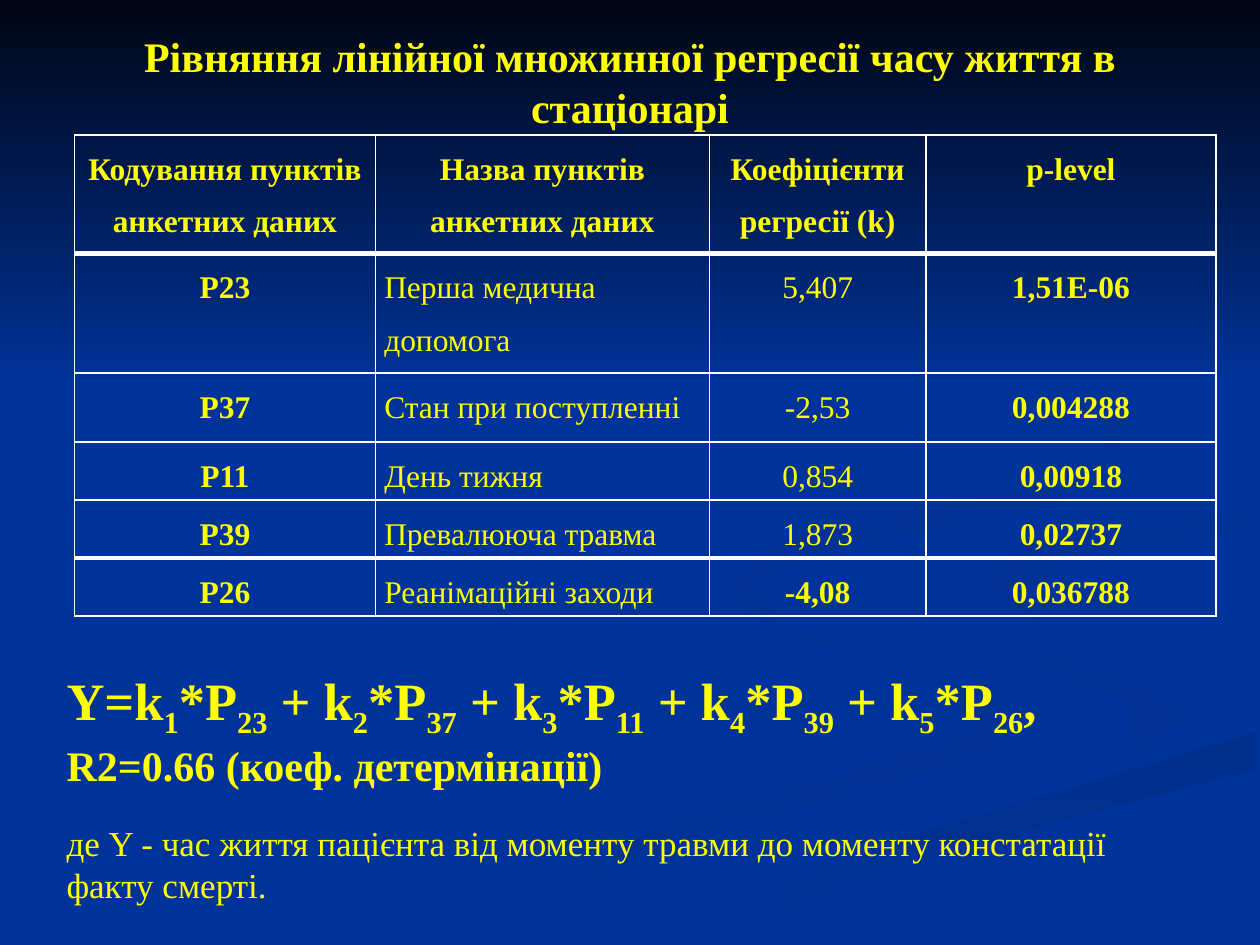
import dataclasses
import typing

import lxml.etree
import pptx
import pptx.dml.color
import pptx.enum.shapes
import pptx.enum.text
import pptx.oxml.ns
import pptx.util

Inches = pptx.util.Inches
Pt = pptx.util.Pt
Align = pptx.enum.text.PP_ALIGN
Points = typing.Sequence[typing.Tuple[float, float]]
FONT, YELLOW, BLUE, WHITE = "Times New Roman", "FFFF00", "003399", "FFFFFF"


@dataclasses.dataclass
class Ribbon:
    points: Points
    start: str
    end: str
    angle: int


@dataclasses.dataclass
class Predictor:
    code: str
    name: str
    coefficient: str
    p_level: str
    significant: bool = False


RIBBONS = [
    Ribbon([(7.8, 5.5), (6.1, 5), (5.75, 4.59), (5.8, 4.8), (7.6, 5.5), (7.8, 5.8),
            (5.4, 6.5), (3, 7.49), (3.6, 7.49), (5.6, 6.6), (7.8, 6), (8, 5.8)],
           BLUE, "003193", 0),
    Ribbon([(9.43, 5.7), (9, 5.4), (7.6, 5), (7.24, 4.64), (7.5, 5), (9, 5.6), (8.94, 6.05)],
           BLUE, "003193", 45),
    Ribbon([(5.03, 7.49), (5.7, 7.49), (7, 6.9), (9.98, 6.1), (9.98, 5.81), (7.6, 6.5),
            (6, 7)], "002F8C", BLUE, 90),
    Ribbon([(7.25, 4.64), (7.6, 5), (9, 5.4), (9.43, 5.7), (9, 6), (6.6, 6.7), (4.77, 7.49),
            (5.03, 7.49), (7, 6.7), (9.99, 5.8), (9.99, 5.4), (8.2, 4.9), (7.8, 4.6),
            (8.5, 4.3), (9.99, 4), (9.99, 3.87), (7.9, 4.2)], BLUE, BLUE, 0),
    Ribbon([(7.81, 4.6), (8.26, 4.96), (8.1, 4.7), (8.6, 4.4), (9.98, 4.2), (9.98, 4.02),
            (8.2, 4.3)], "003091", BLUE, 45),
    Ribbon([(6.8, 4.3), (8.4, 4), (8.94, 3.4), (8.5, 2.8), (7.62, 2.33), (8.7, 3),
            (8.8, 3.6), (8, 3.9), (6.2, 4.3), (5.77, 4.6), (6.22, 5), (5.95, 4.6)],
           "002F8E", BLUE, 45),
    Ribbon([(0, 0), (0, 3.08), (10, 3.08), (10, 0)], "000514", BLUE, 90),
]

HEADINGS = ["Кодування пунктів анкетних даних", "Назва пунктів анкетних даних",
            "Коефіцієнти регресії (k)", "p-level"]
PREDICTORS = [
    Predictor("P23", "Перша медична допомога", "5,407", "1,51E-06"),
    Predictor("P37", "Стан при поступленні", "-2,53", "0,004288"),
    Predictor("P11", "День тижня", "0,854", "0,00918"),
    Predictor("P39", "Превалююча травма", "1,873", "0,02737"),
    Predictor("P26", "Реанімаційні заходи", "-4,08", "0,036788", True),
]
COLUMN_WIDTHS = [2.39, 2.65, 1.72, 2.3]
ROW_HEIGHTS = [0.94, 0.95, 0.55, 0.46, 0.46, 0.46]
THICK_LINES = {1, 5}


def color(value: str) -> pptx.dml.color.RGBColor:
    return pptx.dml.color.RGBColor.from_string(value)


def format_runs(paragraph, size: float, bold: bool) -> None:
    for run in paragraph.runs:
        run.font.name = FONT
        run.font.size = Pt(size)
        run.font.bold = bold
        run.font.color.rgb = color(YELLOW)


def draw_ribbon(slide, ribbon: Ribbon) -> None:
    points = [(Inches(x), Inches(y)) for x, y in ribbon.points]
    builder = slide.shapes.build_freeform(*points[0])
    builder.add_line_segments(points[1:], close=True)
    shape = builder.convert_to_shape()
    shape.shadow.inherit = False
    shape.line.fill.background()
    shape.fill.gradient()
    shape.fill.gradient_angle = (360 - ribbon.angle) % 360
    for stop, value in zip(shape.fill.gradient_stops, (ribbon.start, ribbon.end)):
        stop.color.rgb = color(value)
    slide.shapes.title.element.addprevious(shape.element)


def set_borders(cell, row: int) -> None:
    properties = cell._tc.get_or_add_tcPr()
    widths = {"L": 1, "R": 1, "T": 3 if row in THICK_LINES else 1,
              "B": 3 if row + 1 in THICK_LINES else 1}
    for index, (side, width) in enumerate(widths.items()):
        line = lxml.etree.Element(pptx.oxml.ns.qn(f"a:ln{side}"), w=str(Pt(width)))
        fill = lxml.etree.SubElement(line, pptx.oxml.ns.qn("a:solidFill"))
        lxml.etree.SubElement(fill, pptx.oxml.ns.qn("a:srgbClr"), val=WHITE)
        properties.insert(index, line)


def fill_cell(cell, text: str, row: int, align, bold: bool) -> None:
    cell.margin_left = cell.margin_right = Inches(0.07)
    cell.margin_top = cell.margin_bottom = 0
    cell.fill.background()
    cell.text_frame.text = text
    paragraph = cell.text_frame.paragraphs[0]
    paragraph.alignment = align
    paragraph.line_spacing = 1.5
    format_runs(paragraph, 18, bold)
    set_borders(cell, row)


def draw_table(slide) -> None:
    frame = slide.shapes.add_table(
        len(ROW_HEIGHTS), len(COLUMN_WIDTHS), Inches(0.59), Inches(1.07),
        Inches(sum(COLUMN_WIDTHS)), Inches(sum(ROW_HEIGHTS)))
    table = frame.table
    table.first_row = table.horz_banding = False
    for column, width in zip(table.columns, COLUMN_WIDTHS):
        column.width = Inches(width)
    for row, height in zip(table.rows, ROW_HEIGHTS):
        row.height = Inches(height)
    for index, heading in enumerate(HEADINGS):
        fill_cell(table.cell(0, index), heading, 0, Align.CENTER, True)
    for row, item in enumerate(PREDICTORS, 1):
        fill_cell(table.cell(row, 0), item.code, row, Align.CENTER, True)
        fill_cell(table.cell(row, 1), item.name, row, Align.LEFT, False)
        fill_cell(table.cell(row, 2), item.coefficient, row, Align.CENTER, item.significant)
        fill_cell(table.cell(row, 3), item.p_level, row, Align.CENTER, True)


def draw_equation(slide) -> None:
    box = slide.shapes.add_textbox(Inches(0.43), Inches(5.25), Inches(9.06), Inches(1.96))
    text_frame = box.text_frame
    text_frame.word_wrap = True
    formula = text_frame.paragraphs[0]
    for index, item in enumerate(PREDICTORS, 1):
        pieces = ["Y=k" if index == 1 else " + k", str(index), "*P", item.code[1:]]
        for position, piece in enumerate(pieces):
            run = formula.add_run()
            run.text = piece
            if position % 2:
                run._r.get_or_add_rPr().set("baseline", "-25000")
    formula.add_run().text = ","
    format_runs(formula, 30, True)
    determination = text_frame.add_paragraph()
    determination.text = "R2=0.66 (коеф. детермінації)"
    format_runs(determination, 24, True)
    legend = text_frame.add_paragraph()
    legend.text = ("де Y - час життя пацієнта від моменту травми до моменту "
                   "констатації факту смерті.")
    legend.space_before = Pt(18)
    format_runs(legend, 20, False)


def main() -> None:
    presentation = pptx.Presentation()
    presentation.slide_width, presentation.slide_height = Inches(10), Inches(7.5)
    slide = presentation.slides.add_slide(presentation.slide_layouts[5])
    slide.background.fill.solid()
    slide.background.fill.fore_color.rgb = color(BLUE)
    for ribbon in RIBBONS:
        draw_ribbon(slide, ribbon)
    title = slide.shapes.title
    title.left, title.top, title.width, title.height = map(Inches, (0.5, 0.3, 9, 0.69))
    title.text_frame.text = "Рівняння лінійної множинної регресії часу життя в стаціонарі"
    title.text_frame.auto_size = pptx.enum.text.MSO_AUTO_SIZE.NONE
    title.text_frame.vertical_anchor = pptx.enum.text.MSO_ANCHOR.MIDDLE
    title.text_frame.paragraphs[0].alignment = Align.CENTER
    format_runs(title.text_frame.paragraphs[0], 24, True)
    draw_table(slide)
    draw_equation(slide)
    presentation.save("out.pptx")


if __name__ == "__main__":
    main()
